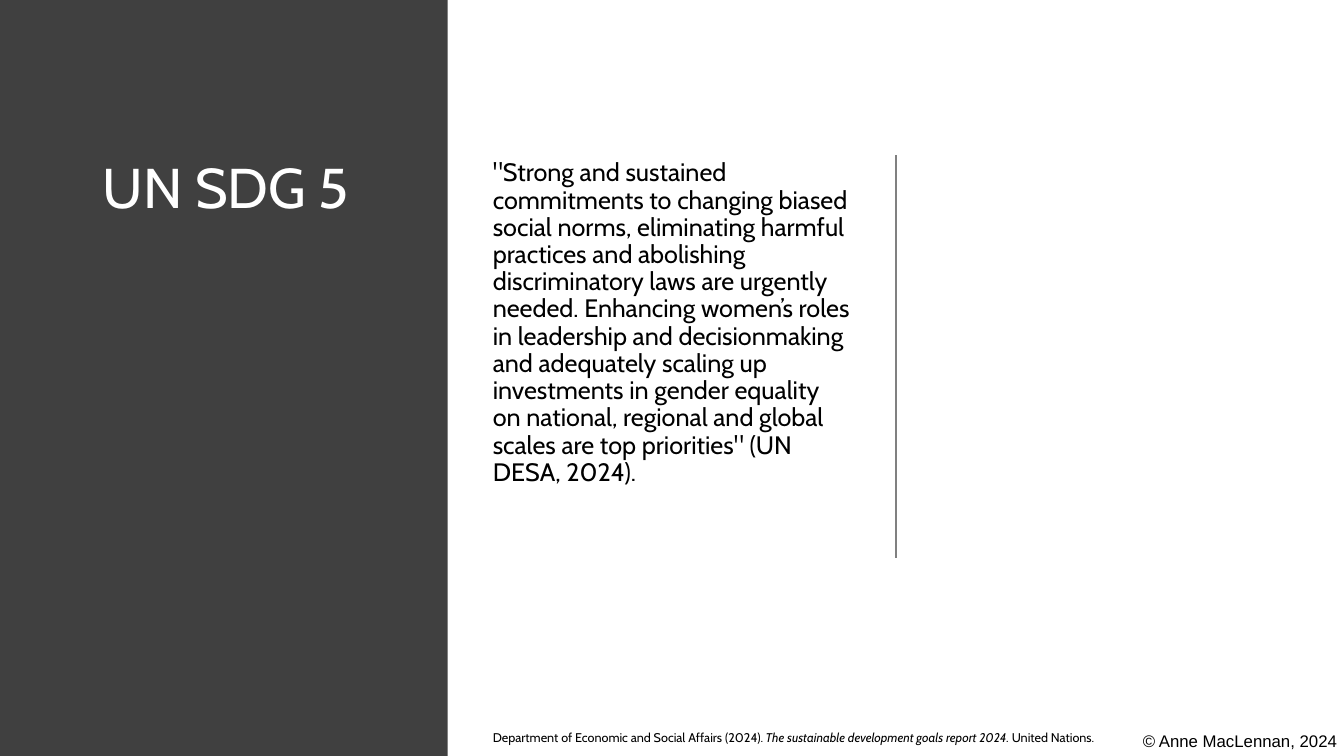
from lxml.etree import SubElement
from pptx import Presentation
from pptx.dml.color import RGBColor
from pptx.enum.shapes import MSO_CONNECTOR, MSO_SHAPE
from pptx.enum.text import MSO_ANCHOR, MSO_AUTO_SIZE
from pptx.oxml.ns import qn
from pptx.util import Cm, Pt

CHARCOAL = RGBColor(0x40, 0x40, 0x40)
GREY = RGBColor(0x80, 0x80, 0x80)
WHITE = RGBColor(0xFF, 0xFF, 0xFF)
BLACK = RGBColor(0x00, 0x00, 0x00)

SLIDE_WIDTH, SLIDE_HEIGHT = Cm(33.87), Cm(19.05)
PANEL_WIDTH = Cm(11.28)
CONTENT_TOP = Cm(3.91)
CONTENT_HEIGHT = Cm(12.12)

QUOTE = (
    '"Strong and sustained commitments to changing biased social norms, '
    "eliminating harmful practices and abolishing discriminatory laws are "
    "urgently needed. Enhancing women’s roles in leadership and decisionmaking "
    "and adequately scaling up investments in gender equality on national, "
    'regional and global scales are top priorities" (UN DESA, 2024).'
)
SOURCE = [
    ("Department of Economic and Social Affairs (2024). ", False),
    ("The sustainable development goals report 2024.", True),
    (" United Nations.", False),
]


def add_text(page, box, spans, size, name="Cabin", color=BLACK, grow=False, **spacing):
    """Place one paragraph of (text, italic) spans in a box."""
    frame = page.shapes.add_textbox(*box).text_frame
    fit = MSO_AUTO_SIZE.SHAPE_TO_FIT_TEXT if grow else MSO_AUTO_SIZE.NONE
    settings = {"word_wrap": True, "vertical_anchor": MSO_ANCHOR.TOP, "auto_size": fit}
    for key, value in settings.items():
        setattr(frame, key, value)
    para = frame.paragraphs[0]
    for key, value in spacing.items():
        setattr(para, key, value)
    for text, italic in spans:
        span = para.add_run()
        span.text = text
        span.font.color.rgb = color
        for key, value in {"size": Pt(size), "name": name, "italic": italic}.items():
            setattr(span.font, key, value)


def add_title_panel(page, box):
    """Draw the dark panel with the slide title inside it."""
    left, top, width, height = box
    panel = page.shapes.add_shape(MSO_SHAPE.RECTANGLE, *box)
    panel.shadow.inherit = False
    panel.fill.solid()
    panel.fill.fore_color.rgb = CHARCOAL
    panel.line.fill.background()
    title_box = (left + Cm(2.34), top + CONTENT_TOP, Cm(8.05), CONTENT_HEIGHT)
    add_text(page, title_box, [("UN SDG 5", False)], 40, color=WHITE, line_spacing=0.9)


def add_quote(page, box):
    """Set the quotation with a vertical rule to its right."""
    left, top, width, height = box
    add_text(page, box, [(QUOTE, False)], 18, line_spacing=0.9, space_before=Pt(10))
    rule_left = left + width + Cm(0.88)
    rule = page.shapes.add_connector(
        MSO_CONNECTOR.STRAIGHT, rule_left, top, rule_left, top + Cm(10.16)
    )
    rule.line.color.rgb = GREY
    rule.line.width = Pt(1)
    SubElement(rule._element.spPr, qn("a:effectLst"))


def add_footer(page, box):
    """Set the source reference and the copyright line along the bottom."""
    left, top, width, height = box
    copyright_box = (left + Cm(16.38), top + Cm(0.03), Cm(7.62), Cm(0.76))
    add_text(page, copyright_box, [("© Anne MacLennan, 2024", False)], 12, "Arial", grow=True)
    add_text(page, box, SOURCE, 9, grow=True)


def main():
    """Build and save the slide."""
    deck = Presentation()
    deck.slide_width, deck.slide_height = SLIDE_WIDTH, SLIDE_HEIGHT
    page = deck.slides.add_slide(deck.slide_layouts[6])
    text_left = PANEL_WIDTH + Cm(0.89)
    add_title_panel(page, (0, 0, PANEL_WIDTH, SLIDE_HEIGHT))
    add_quote(page, (text_left, CONTENT_TOP, Cm(9.53), CONTENT_HEIGHT))
    add_footer(page, (text_left, Cm(18.26), Cm(17.17), Cm(0.64)))
    deck.save("out.pptx")


if __name__ == "__main__":
    main()
